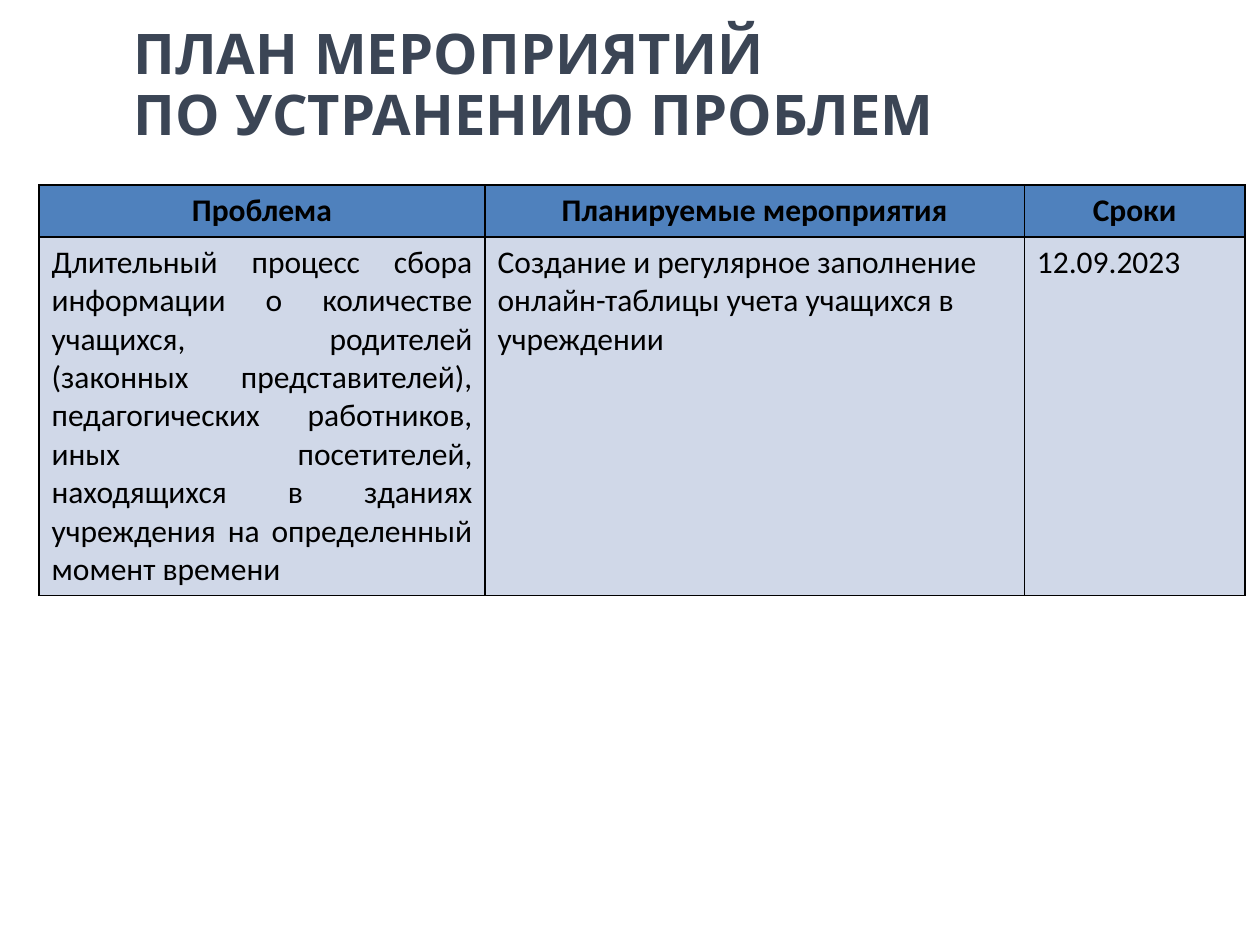
from pptx import Presentation
from pptx.dml.color import RGBColor
from pptx.enum.text import MSO_ANCHOR, PP_ALIGN
from pptx.oxml import parse_xml
from pptx.oxml.ns import nsdecls
from pptx.util import Inches, Pt

LEFT, CENTER, JUSTIFY = PP_ALIGN.LEFT, PP_ALIGN.CENTER, PP_ALIGN.JUSTIFY
TOP = MSO_ANCHOR.TOP
COLORS = {"title": "3B4555", "text": "000000", "border": "000000",
          "header": "4F81BD", "body": "D0D8E8"}


def write(frame, text, font="Calibri", size=18, color="text", bold=False,
          align=LEFT, spacing=1.0):
    paragraph = frame.paragraphs[0]
    paragraph.text = text
    paragraph.alignment = align
    paragraph.line_spacing = spacing
    for run in paragraph.runs:
        run.font.name = font
        run.font.size = Pt(size)
        run.font.bold = bold
        run.font.color.rgb = RGBColor.from_string(COLORS[color])


def add_borders(cell):
    properties = cell._tc.get_or_add_tcPr()
    for position, side in enumerate(("lnL", "lnR", "lnT", "lnB")):
        properties.insert(position, parse_xml(
            f'<a:{side} {nsdecls("a")} w="{Pt(1)}"><a:solidFill>'
            f'<a:srgbClr val="{COLORS["border"]}"/></a:solidFill></a:{side}>'))


prs = Presentation()
prs.slide_width, prs.slide_height = Inches(10), Inches(7.5)
slide = prs.slides.add_slide(prs.slide_layouts[6])

column_widths = [3.54, 4.28, 1.75]
row_heights = [0.41, 2.84]
plan_rows = [
    [("Проблема", CENTER), ("Планируемые мероприятия", CENTER), ("Сроки", CENTER)],
    [("Длительный процесс сбора информации о количестве учащихся, родителей "
      "(законных представителей), педагогических работников, иных посетителей, "
      "находящихся в зданиях учреждения на определенный момент времени", JUSTIFY),
     ("Создание и регулярное заполнение онлайн-таблицы учета учащихся в учреждении", LEFT),
     ("12.09.2023", JUSTIFY)],
]
plan = slide.shapes.add_table(
    len(row_heights), len(column_widths), Inches(0.31), Inches(1.47),
    Inches(sum(column_widths)), Inches(sum(row_heights))).table
for column, width in zip(plan.columns, column_widths):
    column.width = Inches(width)
for row, height in zip(plan.rows, row_heights):
    row.height = Inches(height)

for r, entries in enumerate(plan_rows):
    for c, (text, align) in enumerate(entries):
        cell = plan.cell(r, c)
        cell.fill.solid()
        cell.fill.fore_color.rgb = RGBColor.from_string(COLORS["body" if r else "header"])
        write(cell.text_frame, text, bold=r == 0, align=align)
        add_borders(cell)

heading = slide.shapes.add_textbox(
    Inches(1.06), Inches(0.21), Inches(7.27), Inches(1.08)).text_frame
heading.margin_left = heading.margin_right = heading.margin_top = heading.margin_bottom = 0
heading.vertical_anchor = TOP
heading.word_wrap = True
write(heading, "ПЛАН МЕРОПРИЯТИЙ\vПО УСТРАНЕНИЮ ПРОБЛЕМ", font="Quicksand",
      size=32, color="title", bold=True, spacing=0.9)

prs.save("out.pptx")
